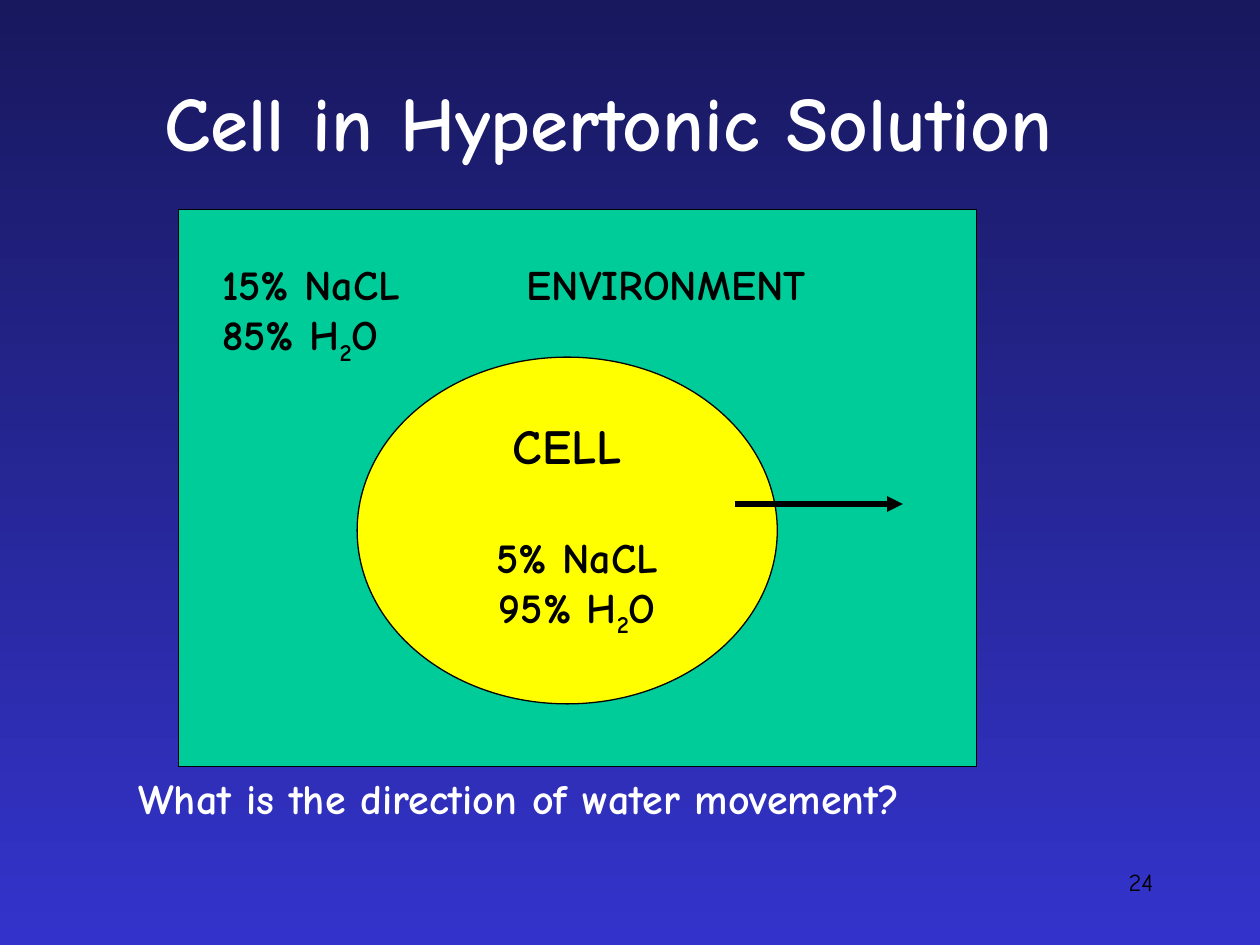
from lxml.etree import SubElement
from pptx import Presentation
from pptx.dml.color import RGBColor
from pptx.enum.shapes import MSO_CONNECTOR, MSO_SHAPE
from pptx.enum.text import MSO_ANCHOR, PP_ALIGN
from pptx.oxml.ns import qn
from pptx.util import Cm, Pt

FONT = "Comic Neue"
BLACK = RGBColor(0x00, 0x00, 0x00)
WHITE = RGBColor(0xFF, 0xFF, 0xFF)
GREEN = RGBColor(0x00, 0xCC, 0x99)
YELLOW = RGBColor(0xFF, 0xFF, 0x00)
NAVY = RGBColor(0x18, 0x18, 0x5E)
BLUE = RGBColor(0x33, 0x33, 0xCC)
LEFT, MID, RIGHT = PP_ALIGN.LEFT, PP_ALIGN.CENTER, PP_ALIGN.RIGHT


def paint_back(slide):
    fill = slide.background.fill
    fill.gradient()
    fill.gradient_angle = 270
    for stop, color, pos in zip(fill.gradient_stops, (NAVY, BLUE), (0, 1)):
        stop.color.rgb = color
        stop.position = pos


def add_text(slide, box, lines, size=24, color=BLACK, align=LEFT,
             bold=True, anchor=MSO_ANCHOR.TOP):
    """Write one paragraph per line; a part between underscores is lowered."""
    frame = slide.shapes.add_textbox(*map(Cm, box)).text_frame
    frame.word_wrap = True
    frame.vertical_anchor = anchor
    for i, line in enumerate(lines):
        para = frame.add_paragraph() if i else frame.paragraphs[0]
        para.alignment = align
        for j, part in enumerate(line.split("_")):
            run = para.add_run()
            run.text = part
            font = run.font
            font.name, font.size, font.bold = FONT, Pt(size), bold
            font.color.rgb = color
            if j % 2:
                run._r.get_or_add_rPr().set("baseline", "-25000")


def add_area(slide, kind, box, color):
    area = slide.shapes.add_shape(kind, *map(Cm, box))
    area.shadow.inherit = False
    area.fill.solid()
    area.fill.fore_color.rgb = color
    area.line.color.rgb = BLACK
    area.line.width = Pt(0.75)


def add_arrow(slide, ends):
    arrow = slide.shapes.add_connector(MSO_CONNECTOR.STRAIGHT, *map(Cm, ends))
    arrow.line.color.rgb = BLACK
    arrow.line.width = Pt(3)
    SubElement(arrow.line._get_or_add_ln(), qn("a:tailEnd"), type="triangle")
    SubElement(arrow._element.spPr, qn("a:effectLst"))


def main():
    deck = Presentation()
    deck.slide_width, deck.slide_height = Cm(25.4), Cm(19.05)
    slide = deck.slides.add_slide(deck.slide_layouts[6])
    paint_back(slide)

    add_text(slide, (18.2, 17.35, 5.3, 1.27), ["24"], 14, align=RIGHT, bold=False)
    add_text(slide, (1.48, 0.85, 21.59, 3.18), ["Cell in Hypertonic Solution"],
             44, WHITE, MID, anchor=MSO_ANCHOR.MIDDLE)

    add_area(slide, MSO_SHAPE.RECTANGLE, (3.6, 4.23, 16.09, 11.22), GREEN)
    add_area(slide, MSO_SHAPE.OVAL, (7.2, 7.2, 8.47, 6.99), YELLOW)

    add_text(slide, (9.53, 8.26, 3.81, 1.45), ["CELL"], 28, align=MID)
    add_text(slide, (4.23, 5.08, 5.93, 2.29), ["15% NaCL", "85% H_2_O"])
    add_text(slide, (9.1, 10.58, 5.08, 2.29), ["5% NaCL", "95% H_2_O"], align=MID)
    add_text(slide, (2.54, 15.45, 18.84, 1.27),
             ["What is the direction of water movement?"], color=WHITE)
    add_arrow(slide, (14.82, 10.16, 18.2, 10.16))
    add_text(slide, (10.37, 5.08, 8.47, 1.27), ["ENVIRONMENT"])

    deck.save("out.pptx")


if __name__ == "__main__":
    main()
